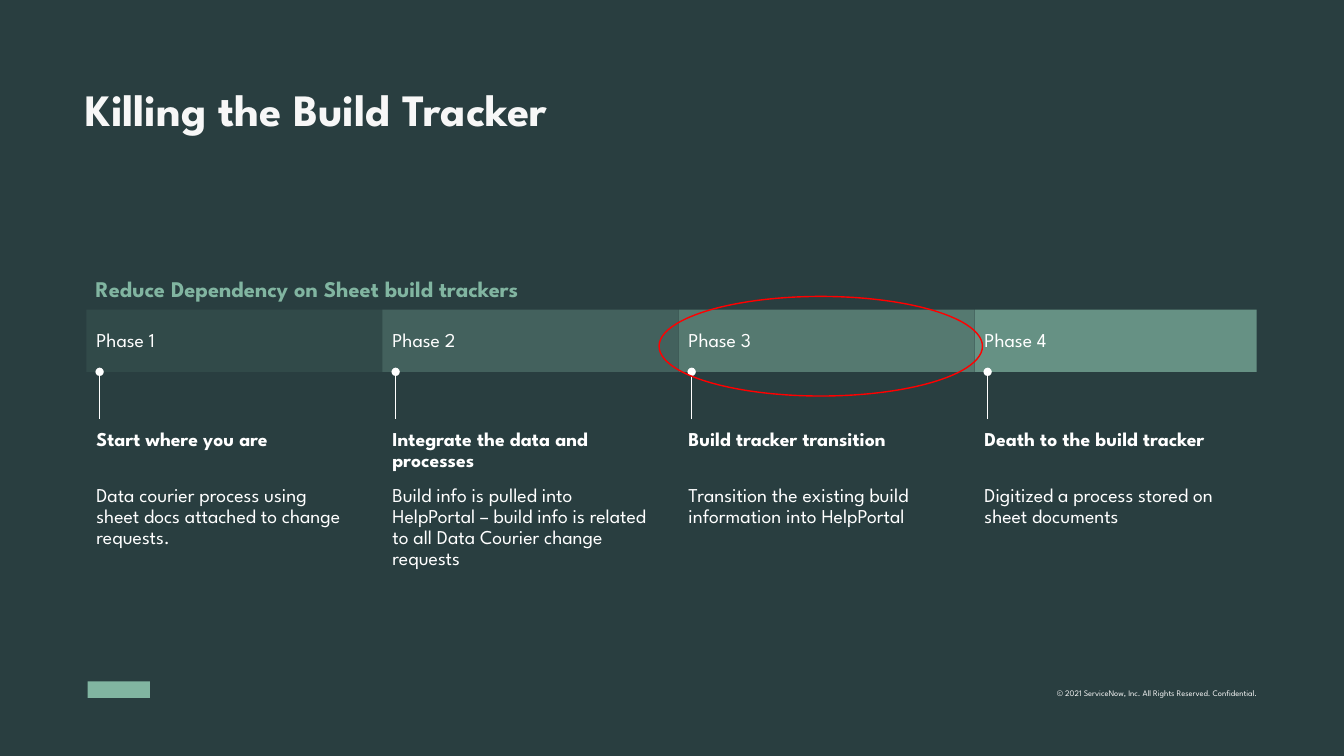
from dataclasses import dataclass

from lxml import etree
from pptx import Presentation
from pptx.dml.color import RGBColor
from pptx.enum.shapes import MSO_CONNECTOR, MSO_SHAPE
from pptx.enum.text import MSO_ANCHOR, PP_ALIGN
from pptx.oxml.ns import qn
from pptx.shapes.autoshape import Shape
from pptx.slide import Slide
from pptx.util import Cm, Pt

RECTANGLE, ELLIPSE = MSO_SHAPE.RECTANGLE, MSO_SHAPE.OVAL
STRAIGHT = MSO_CONNECTOR.STRAIGHT
TOP, MIDDLE, BOTTOM = MSO_ANCHOR.TOP, MSO_ANCHOR.MIDDLE, MSO_ANCHOR.BOTTOM
LEFT, RIGHT = PP_ALIGN.LEFT, PP_ALIGN.RIGHT

FONT = "League Spartan"
COLORS = {
    "background": "293E40",
    "mint": "81B5A1",
    "white": "FFFFFF",
    "off_white": "F7F7F7",
    "red": "FF0000",
}

# Lengths in centimetres
PHASE_LEFT, PHASE_PITCH = 2.18, 7.46
BAR_TOP, BAR_HEIGHT = 7.8, 1.57
BAR_BOTTOM = BAR_TOP + BAR_HEIGHT
PIN_INDENT, PIN_LENGTH = 0.33, 1.2
TEXT_WIDTH = 6.96


@dataclass(frozen=True)
class Area:
    left: float
    top: float
    width: float
    height: float

    def lengths(self) -> tuple[Cm, Cm, Cm, Cm]:
        return Cm(self.left), Cm(self.top), Cm(self.width), Cm(self.height)


@dataclass(frozen=True)
class TextStyle:
    size: float
    color: str = "white"
    bold: bool = False
    anchor: MSO_ANCHOR = TOP
    align: PP_ALIGN = LEFT
    line_spacing: float = 0.9


@dataclass(frozen=True)
class Phase:
    label: str
    heading: str
    detail: str
    opacity: int
    bar_width: float = PHASE_PITCH


TITLE = TextStyle(32, "off_white", bold=True, anchor=BOTTOM, line_spacing=1.0)
SUBTITLE = TextStyle(16, "mint", bold=True, anchor=BOTTOM)
BAR_LABEL = TextStyle(14, anchor=MIDDLE)
HEADING = TextStyle(14, bold=True)
DETAIL = TextStyle(14)
FOOTER = TextStyle(6, "off_white", align=RIGHT, line_spacing=1.0)

PHASES = [
    Phase("Phase 1", "Start where you are",
          "Data courier process using sheet docs attached to change requests.", 10),
    Phase("Phase 2", "Integrate the data and processes",
          "Build info is pulled into HelpPortal – build info is related to all "
          "Data Courier change requests", 30),
    Phase("Phase 3", "Build tracker transition",
          "Transition the existing build information into HelpPortal", 50),
    Phase("Phase 4", "Death to the build tracker",
          "Digitized a process stored on sheet documents", 70, bar_width=7.11),
]


def rgb(name: str) -> RGBColor:
    return RGBColor.from_string(COLORS[name])


def write(box: Shape, text: str, style: TextStyle) -> None:
    frame = box.text_frame
    frame.word_wrap = True
    frame.vertical_anchor = style.anchor
    para = frame.paragraphs[0]
    para.text = text
    para.alignment = style.align
    para.line_spacing = style.line_spacing
    para.font.name = FONT
    para.font.size = Pt(style.size)
    para.font.bold = style.bold
    para.font.color.rgb = rgb(style.color)


def add_text(page: Slide, area: Area, text: str, style: TextStyle) -> None:
    write(page.shapes.add_textbox(*area.lengths()), text, style)


def add_filled_rectangle(page: Slide, area: Area, opacity: int = 100) -> Shape:
    """Add a borderless mint rectangle; opacity is in percent."""
    box = page.shapes.add_shape(RECTANGLE, *area.lengths())
    box.shadow.inherit = False
    box.line.fill.background()
    box.fill.solid()
    box.fill.fore_color.rgb = rgb("mint")
    if opacity < 100:
        color = box._element.spPr.find(qn("a:solidFill")).find(qn("a:srgbClr"))
        etree.SubElement(color, qn("a:alpha"), val=str(opacity * 1000))
    return box


def add_pin(page: Slide, x: float) -> None:
    """Add a line with a round head, hanging from the bar."""
    pin = page.shapes.add_connector(
        STRAIGHT, Cm(x), Cm(BAR_BOTTOM), Cm(x), Cm(BAR_BOTTOM + PIN_LENGTH))
    pin.line.color.rgb = rgb("white")
    pin.line.width = Pt(1)
    properties = pin._element.spPr
    etree.SubElement(properties.find(qn("a:ln")), qn("a:headEnd"), type="oval")
    etree.SubElement(properties, qn("a:effectLst"))


def add_phase(page: Slide, phase: Phase, left: float) -> None:
    bar = add_filled_rectangle(
        page, Area(left, BAR_TOP, phase.bar_width, BAR_HEIGHT), phase.opacity)
    write(bar, phase.label, BAR_LABEL)
    add_pin(page, left + PIN_INDENT)
    add_text(page, Area(left, 10.7, TEXT_WIDTH, 1.85), phase.heading, HEADING)
    add_text(page, Area(left, 12.1, TEXT_WIDTH, 4.57), phase.detail, DETAIL)


def add_highlight(page: Slide, area: Area) -> None:
    ring = page.shapes.add_shape(ELLIPSE, *area.lengths())
    ring.shadow.inherit = False
    ring.fill.background()
    ring.line.color.rgb = rgb("red")
    ring.line.width = Pt(1)


def main() -> None:
    deck = Presentation()
    deck.slide_width, deck.slide_height = Cm(33.87), Cm(19.05)
    page = deck.slides.add_slide(deck.slide_layouts[6])
    page.background.fill.solid()
    page.background.fill.fore_color.rgb = rgb("background")

    add_filled_rectangle(page, Area(2.21, 17.17, 1.57, 0.42))
    add_text(page, Area(15.01, 17.22, 16.92, 0.51),
             "© 2021 ServiceNow, Inc. All Rights Reserved. Confidential.", FOOTER)
    add_text(page, Area(1.9, 1.63, 30.1, 1.9), "Killing the Build Tracker", TITLE)
    add_text(page, Area(2.16, 6.88, 14.78, 0.86),
             "Reduce Dependency on Sheet build trackers", SUBTITLE)
    for index, phase in enumerate(PHASES):
        add_phase(page, phase, PHASE_LEFT + index * PHASE_PITCH)
    add_highlight(page, Area(16.61, 7.47, 8.15, 2.51))

    deck.save("out.pptx")


if __name__ == "__main__":
    main()
